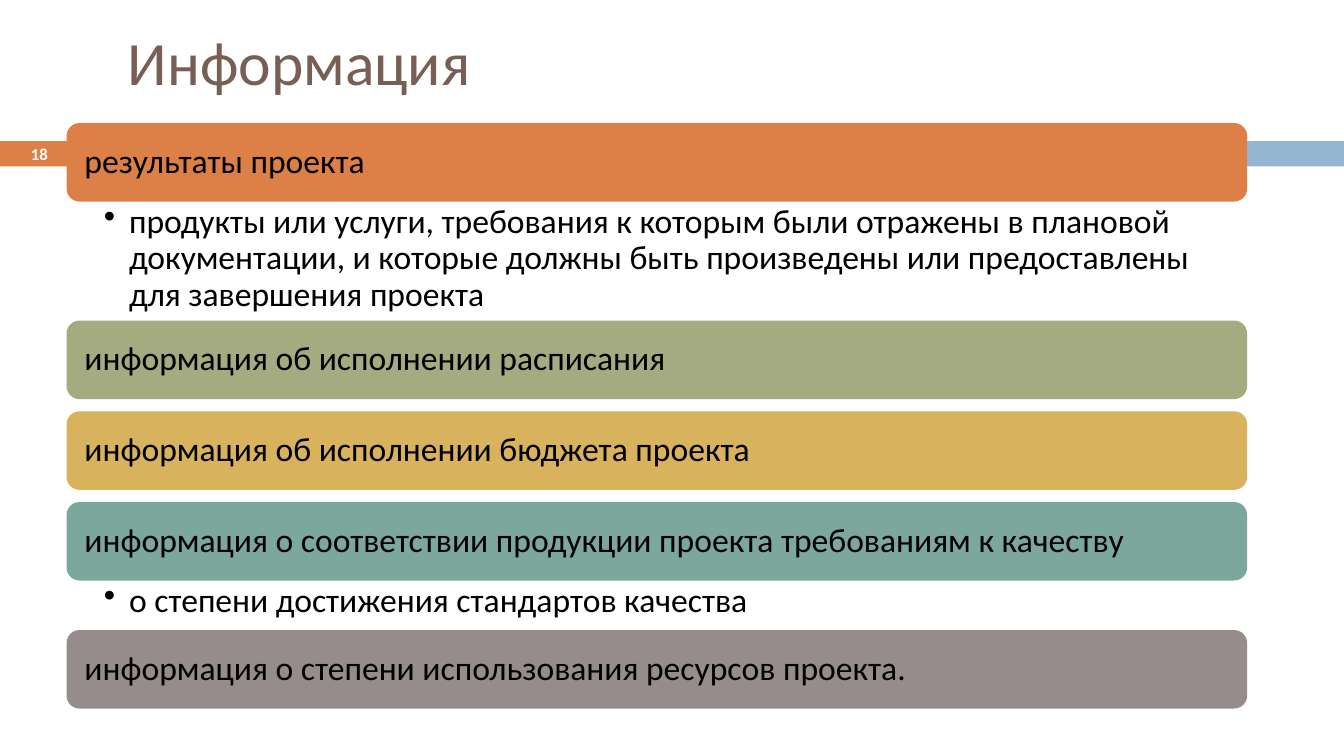
from dataclasses import dataclass

from lxml import etree
from pptx import Presentation
from pptx import util as u
from pptx.dml.color import RGBColor
from pptx.enum import shapes, text
from pptx.oxml.ns import qn


@dataclass(frozen=True)
class Theme:
    font: str = "Calibri"
    title: str = "775F55"
    body: str = "000000"
    number: str = "FFFFFF"
    orange: str = "DD8047"
    blue: str = "94B6D2"
    green: str = "A5AB81"
    yellow: str = "D8B25C"
    teal: str = "7BA79D"
    grey: str = "968C8C"
    title_size: float = 44
    body_size: float = 24
    number_size: float = 11.9


@dataclass(frozen=True)
class Box:
    left: float
    top: float
    width: float
    height: float

    def emu(self) -> list[u.Length]:
        return [u.Inches(v) for v in (self.left, self.top, self.width, self.height)]


@dataclass(frozen=True)
class Topic:
    heading: str
    color: str
    detail: str = ""
    detail_height: float = 0


THEME = Theme()
LIST_LEFT, LIST_TOP, LIST_WIDTH = 0.66, 1.22, 11.71
BAR_HEIGHT, BAR_GAP = 0.78, 0.12
BULLET_INDENT = 0.25

TOPICS = [
    Topic("результаты проекта", THEME.orange,
          "продукты или услуги, требования к которым были отражены в плановой "
          "документации, и которые должны быть произведены или предоставлены "
          "для завершения проекта", 1.18),
    Topic("информация об исполнении расписания", THEME.green),
    Topic("информация об исполнении бюджета проекта", THEME.yellow),
    Topic("информация о соответствии продукции проекта требованиям к качеству",
          THEME.teal, "о степени достижения стандартов качества", 0.49),
    Topic("информация о степени использования ресурсов проекта.", THEME.grey),
]


def add_block(s, kind: shapes.MSO_SHAPE, box: Box, color: str):
    sp = s.shapes.add_shape(kind, *box.emu())
    sp.shadow.inherit = False
    sp.fill.solid()
    sp.fill.fore_color.rgb = RGBColor.from_string(color)
    sp.line.fill.background()
    return sp


def write(sp, content: str, size: float, color: str, *,
          insets: tuple[float, float, float, float] = (0.1, 0.05, 0.1, 0.05),
          anchor=text.MSO_ANCHOR.MIDDLE, align=text.PP_ALIGN.LEFT,
          bold: bool = False, spacing: float = 1.0):
    """Fill a shape with one paragraph; insets run left, top, right, bottom."""
    tf = sp.text_frame
    tf.word_wrap = True
    tf.vertical_anchor = anchor
    tf.margin_left, tf.margin_top, tf.margin_right, tf.margin_bottom = map(u.Inches, insets)
    p = tf.paragraphs[0]
    p.alignment = align
    p.line_spacing = spacing
    r = p.add_run()
    r.text = content
    r.font.name = THEME.font
    r.font.size = u.Pt(size)
    r.font.bold = bold
    r.font.color.rgb = RGBColor.from_string(color)
    return p


def add_bullet(p) -> None:
    pPr = p._p.get_or_add_pPr()
    indent = u.Inches(BULLET_INDENT)
    pPr.set("marL", str(indent))
    pPr.set("indent", str(-indent))
    etree.SubElement(pPr, qn("a:buChar")).set("char", "•")


def add_topic(s, topic: Topic, top: float) -> float:
    """Draw a bar with its optional detail and return the top of the next bar."""
    bar = add_block(s, shapes.MSO_SHAPE.ROUNDED_RECTANGLE,
                    Box(LIST_LEFT, top, LIST_WIDTH, BAR_HEIGHT), topic.color)
    write(bar, topic.heading, THEME.body_size, THEME.body,
          insets=(0.14, 0.1, 0.14, 0.1), spacing=0.9)
    bottom = top + BAR_HEIGHT
    if not topic.detail:
        return bottom + BAR_GAP
    box = Box(LIST_LEFT, bottom, LIST_WIDTH, topic.detail_height)
    p = write(s.shapes.add_textbox(*box.emu()), topic.detail, THEME.body_size, THEME.body,
              insets=(0.37, 0.03, 0.19, 0.03), anchor=text.MSO_ANCHOR.TOP, spacing=0.9)
    add_bullet(p)
    return bottom + topic.detail_height


def main() -> None:
    prs = Presentation()
    prs.slide_width, prs.slide_height = u.Inches(13.33), u.Inches(7.5)
    s = prs.slides.add_slide(prs.slide_layouts[6])

    number = add_block(s, shapes.MSO_SHAPE.RECTANGLE, Box(0, 1.4, 0.78, 0.25), THEME.orange)
    write(number, "18", THEME.number_size, THEME.number, insets=(0, 0, 0, 0),
          align=text.PP_ALIGN.CENTER, bold=True)
    add_block(s, shapes.MSO_SHAPE.RECTANGLE, Box(0.86, 1.4, 12.47, 0.25), THEME.blue)
    title = s.shapes.add_textbox(*Box(1.17, 0.16, 11, 0.89).emu())
    write(title, "Информация", THEME.title_size, THEME.title)

    top = LIST_TOP
    for topic in TOPICS:
        top = add_topic(s, topic, top)
    prs.save("out.pptx")


if __name__ == "__main__":
    main()
